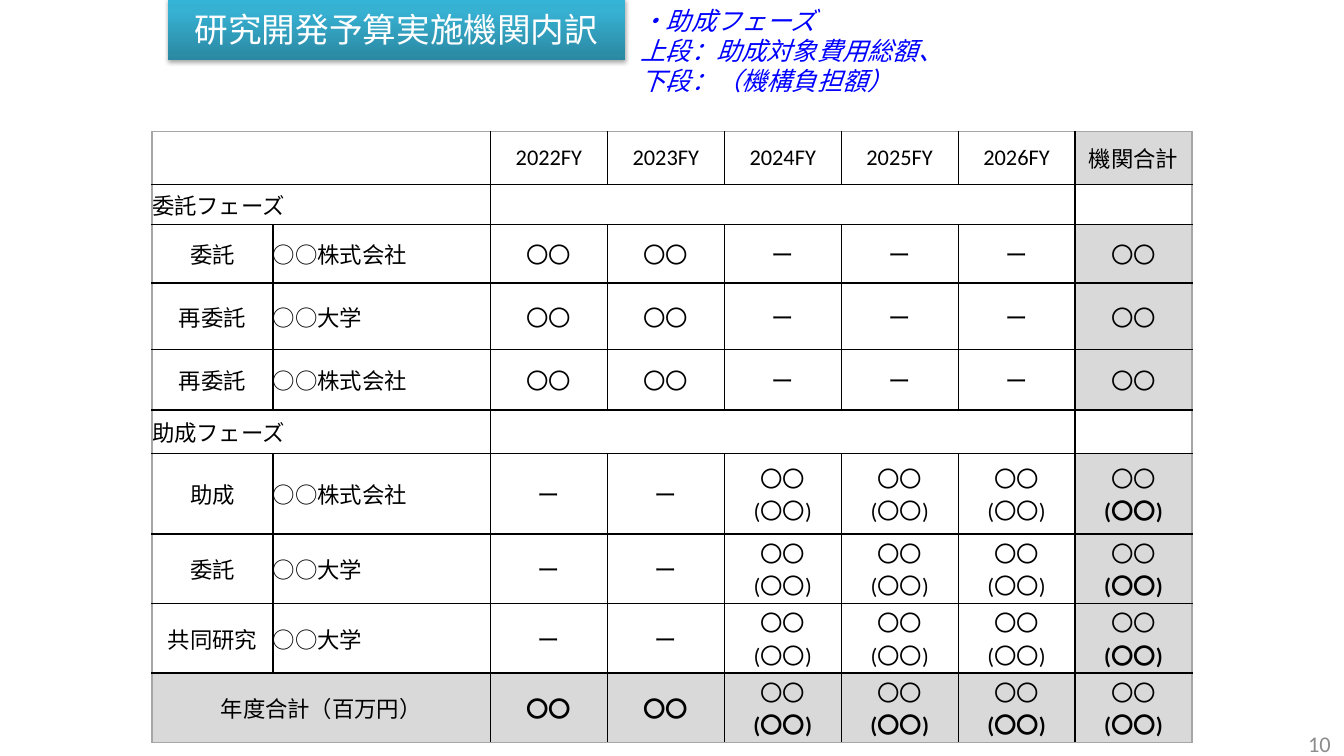
"""Build the slide that breaks the R&D budget down by institution."""
from copy import deepcopy

from lxml.etree import SubElement
from pptx import Presentation
from pptx.dml.color import RGBColor as Color
from pptx.enum.shapes import MSO_SHAPE as Shape
from pptx.enum.text import MSO_ANCHOR as Anchor, PP_ALIGN as Align
from pptx.oxml.ns import qn
from pptx.util import Inches, Pt

BLACK = Color(0x00, 0x00, 0x00)
WHITE = Color(0xFF, 0xFF, 0xFF)
BLUE = Color(0x00, 0x00, 0xFF)
TOTAL_GRAY = Color(0xD9, 0xD9, 0xD9)
EDGE_GRAY = Color(0xA6, 0xA6, 0xA6)
NUMBER_GRAY = Color(0x8C, 0x8C, 0x8C)
TITLE_STOPS = [
    (0, Color(0x2A, 0x88, 0xA2)),
    (0.8, Color(0x37, 0xB1, 0xD2)),
    (1, Color(0x34, 0xB4, 0xD6)),
]

GRID_COLUMNS, GRID_ROWS = 160, 90
LATIN_FONT, TABLE_FONT = "Calibri", "Noto Sans CJK JP"

AMOUNT, NONE = "〇〇", "ー"
SPLIT = "〇〇\n(〇〇)"
COMPANY, UNIVERSITY = "○○株式会社", "○○大学"
YEARS = [f"{year}FY" for year in range(2022, 2027)]
CONTRACT = [AMOUNT] * 2 + [NONE] * 3 + [AMOUNT]
GRANT = [NONE] * 2 + [SPLIT] * 4
BLANK = [""] * 6
BUDGET = [
    ["", "", *YEARS, "機関合計"],
    ["委託フェーズ", "", *BLANK],
    ["委託", COMPANY, *CONTRACT],
    ["再委託", UNIVERSITY, *CONTRACT],
    ["再委託", COMPANY, *CONTRACT],
    ["助成フェーズ", "", *BLANK],
    ["助成", COMPANY, *GRANT],
    ["委託", UNIVERSITY, *GRANT],
    ["共同研究", UNIVERSITY, *GRANT],
    ["年度合計（百万円）", "", AMOUNT, AMOUNT, *[SPLIT] * 4],
]
PHASE_ROWS = (1, 5)
TOTAL_ROW, TOTAL_COLUMN = len(BUDGET) - 1, len(BUDGET[0]) - 1
COLUMN_WIDTHS = [14.4, 25.9] + [13.92] * 6
ROW_HEIGHTS = [6.24, 4.8, 6.96, 7.92, 7.2, 5.16, 9.6, 8.28, 8.28, 8.28]


class SlideBuilder:
    """Hold the grid, the fonts and the current slide."""

    def __init__(self, presentation):
        self.slide = presentation.slides.add_slide(presentation.slide_layouts[6])
        self.column = presentation.slide_width / GRID_COLUMNS
        self.row = presentation.slide_height / GRID_ROWS

    def place(self, left, top, width, height):
        return (round(left * self.column), round(top * self.row),
                round(width * self.column), round(height * self.row))

    def set_text(self, frame, text, size, color, align=Align.LEFT,
                 asian_font=LATIN_FONT, italic=False):
        frame.text = text
        frame.word_wrap = True
        for paragraph in frame.paragraphs:
            paragraph.alignment = align
            font = paragraph.font
            font.name, font.size, font.italic = LATIN_FONT, Pt(size), italic
            font.color.rgb = color
            properties = paragraph._p.pPr.find(qn("a:defRPr"))
            SubElement(properties, qn("a:ea"), typeface=asian_font)

    def title(self, text, *box):
        shape = self.slide.shapes.add_shape(Shape.RECTANGLE, *self.place(*box))
        shape.line.fill.background()
        shape.fill.gradient()
        shape.fill.gradient_angle = 90
        properties = shape._element.spPr
        stops = properties.find(".//" + qn("a:gsLst"))
        stops.append(deepcopy(stops[0]))
        for stop, (position, color) in zip(shape.fill.gradient_stops, TITLE_STOPS):
            stop.position, stop.color.rgb = position, color
        effects = SubElement(properties, qn("a:effectLst"))
        shadow = SubElement(effects, qn("a:outerShdw"), blurRad=str(Pt(3.1)),
                            dist=str(Pt(1.8)), dir="5400000", rotWithShape="0")
        shade = SubElement(shadow, qn("a:srgbClr"), val=str(BLACK))
        SubElement(shade, qn("a:alpha"), val="35000")
        shape.text_frame.vertical_anchor = Anchor.MIDDLE
        self.set_text(shape.text_frame, text, 24, WHITE, Align.CENTER)

    def note(self, text, *box):
        frame = self.slide.shapes.add_textbox(*self.place(*box)).text_frame
        self.set_text(frame, text, 18, BLUE, italic=True)
        for paragraph in frame.paragraphs:
            paragraph._p.pPr.set("marL", str(Inches(0.1)))
            paragraph._p.pPr.set("indent", str(-Inches(0.1)))

    def page_number(self, text, *box):
        frame = self.slide.shapes.add_textbox(*self.place(*box)).text_frame
        frame.vertical_anchor = Anchor.MIDDLE
        self.set_text(frame, text, 16, NUMBER_GRAY, Align.RIGHT)

    def borders(self, cell, outer_sides):
        properties = cell._tc.get_or_add_tcPr()
        for index, (side, outer) in enumerate(zip("LRTB", outer_sides)):
            line = SubElement(properties, qn(f"a:ln{side}"), w=str(Pt(1)))
            fill = SubElement(line, qn("a:solidFill"))
            color = EDGE_GRAY if outer else BLACK
            SubElement(fill, qn("a:srgbClr"), val=str(color))
            properties.insert(index, line)

    def budget_cell(self, cell, text, row, column):
        cell.margin_left = cell.margin_right = 0
        cell.margin_top = cell.margin_bottom = 0
        cell.vertical_anchor = Anchor.MIDDLE
        left_aligned = row in PHASE_ROWS or column == 1
        align = Align.LEFT if left_aligned else Align.CENTER
        self.set_text(cell.text_frame, text, 16, BLACK, align, TABLE_FONT)
        in_total = row == TOTAL_ROW or column == TOTAL_COLUMN
        if in_total and row not in PHASE_ROWS:
            cell.fill.solid()
            cell.fill.fore_color.rgb = TOTAL_GRAY
        else:
            cell.fill.background()
        year_total = row == TOTAL_ROW and column > 1
        if in_total and text == SPLIT or year_total:
            cell.text_frame.paragraphs[-1].font.bold = True
        self.borders(cell, (column == 0, column == TOTAL_COLUMN,
                            row == 0, row == TOTAL_ROW))

    def budget_table(self, left, top):
        box = self.place(left, top, sum(COLUMN_WIDTHS), sum(ROW_HEIGHTS))
        table = self.slide.shapes.add_table(
            len(ROW_HEIGHTS), len(COLUMN_WIDTHS), *box).table
        table.first_row = table.horz_banding = False
        for column, width in zip(table.columns, COLUMN_WIDTHS):
            column.width = round(width * self.column)
        for row, height in zip(table.rows, ROW_HEIGHTS):
            row.height = round(height * self.row)
        for row, texts in enumerate(BUDGET):
            for column, text in enumerate(texts):
                self.budget_cell(table.cell(row, column), text, row, column)
        for row in (0, *PHASE_ROWS, TOTAL_ROW):
            table.cell(row, 0).merge(table.cell(row, 1))
        for row in PHASE_ROWS:
            table.cell(row, 2).merge(table.cell(row, TOTAL_COLUMN - 1))


def main():
    presentation = Presentation()
    presentation.slide_width = Inches(13.33)
    presentation.slide_height = Inches(7.5)
    builder = SlideBuilder(presentation)
    builder.title("研究開発予算実施機関内訳", 20, -0.2, 54.4, 7.3)
    builder.budget_table(18.1, 15.7)
    builder.note("・助成フェーズ\n上段：助成対象費用総額、\n下段：（機構負担額）",
                 75.1, 0, 64.8, 12.1)
    builder.page_number("10", 143, 87, 16.6, 3)
    presentation.save("out.pptx")


if __name__ == "__main__":
    main()
